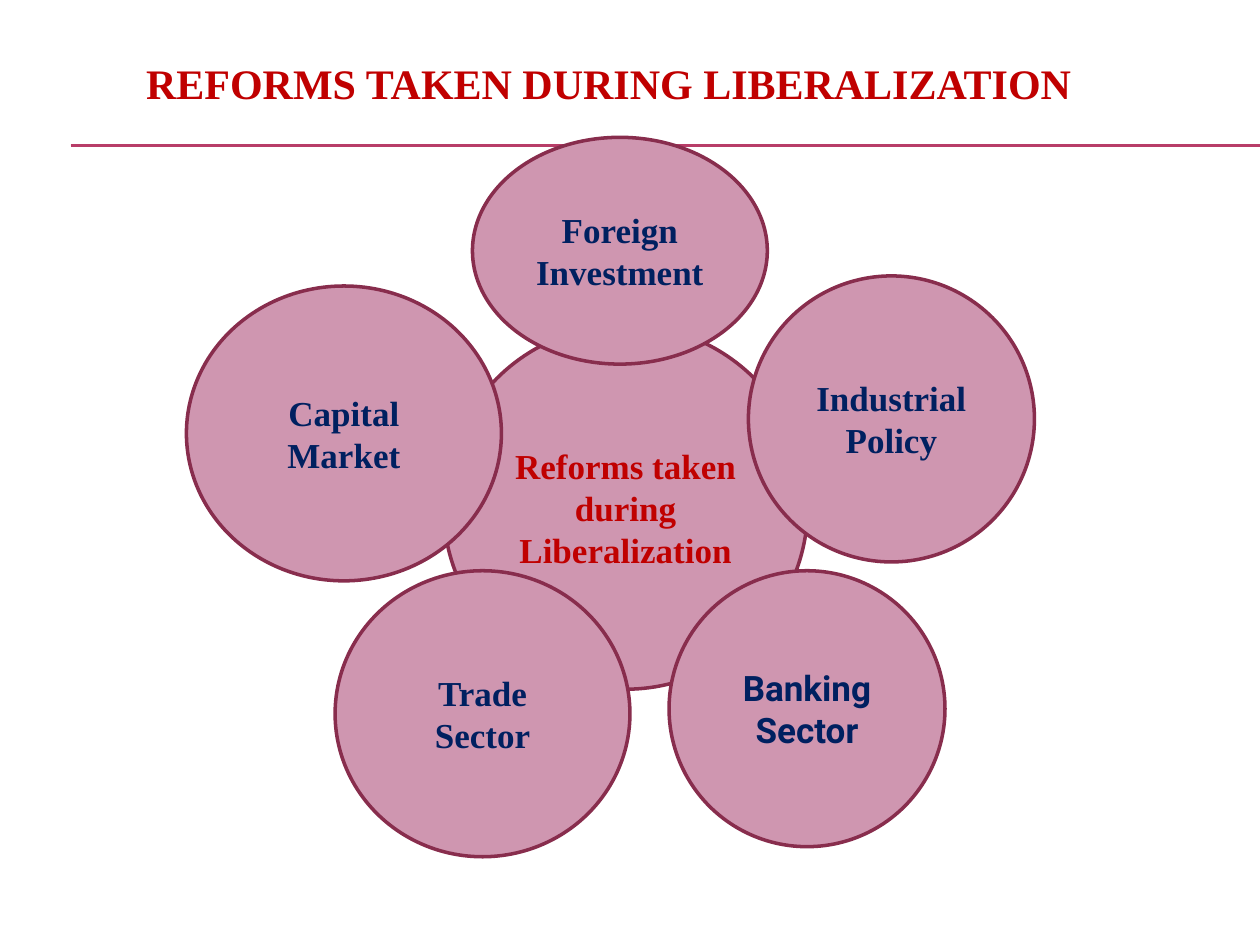
from lxml import etree
from pptx import Presentation
from pptx.dml.color import RGBColor
from pptx.enum.shapes import MSO_CONNECTOR, MSO_SHAPE
from pptx.enum.text import MSO_ANCHOR, PP_ALIGN
from pptx.oxml.ns import qn
from pptx.util import Inches, Pt

STRAIGHT, OVAL = MSO_CONNECTOR.STRAIGHT, MSO_SHAPE.OVAL
MIDDLE = MSO_ANCHOR.MIDDLE
LEFT, CENTER = PP_ALIGN.LEFT, PP_ALIGN.CENTER

RED = RGBColor(0xC0, 0x00, 0x00)
NAVY = RGBColor(0x00, 0x20, 0x60)
ROSE = RGBColor(0xCF, 0x96, 0xB0)
PLUM = RGBColor(0x88, 0x2D, 0x4D)
RULE_PINK = RGBColor(0xB8, 0x3D, 0x68)
SERIF, SANS = "Times New Roman", "Roboto"


def style_text(frame, size, face, color, alignment):
    frame.word_wrap = True
    frame.vertical_anchor = MIDDLE
    for paragraph in frame.paragraphs:
        paragraph.alignment = alignment
        font = paragraph.font
        font.size, font.name, font.bold = Pt(size), face, True
        font.color.rgb = color


prs = Presentation()
prs.slide_width, prs.slide_height = Inches(10), Inches(7.5)
slide = prs.slides.add_slide(prs.slide_layouts[5])

heading = slide.shapes.title
heading.left, heading.top = Inches(0.31), Inches(0.23)
heading.width, heading.height = Inches(9.5), Inches(0.86)
heading.text_frame.text = "REFORMS TAKEN DURING LIBERALIZATION"
heading.text_frame.margin_left = Inches(0.85)
style_text(heading.text_frame, 24, SERIF, RED, LEFT)

# Double rule under the heading
for y in (1.15, 1.16):
    rule = slide.shapes.add_connector(
        STRAIGHT, Inches(0.56), Inches(y), prs.slide_width, Inches(y))
    rule.line.color.rgb = RULE_PINK
    rule.line.width = Pt(0.75)
    etree.SubElement(rule._element.spPr, qn("a:effectLst"))

# Hub first, then the reforms that overlap it: left, top, width, height
circles = [
    ("Reforms taken during Liberalization", 3.52, 2.58, 2.89, 2.89, SERIF, RED),
    ("Foreign\nInvestment", 3.75, 1.09, 2.34, 1.8, SERIF, NAVY),
    ("Industrial\nPolicy", 5.94, 2.19, 2.27, 2.27, SERIF, NAVY),
    ("Trade\nSector", 2.66, 4.53, 2.34, 2.27, SERIF, NAVY),
    ("Capital\nMarket", 1.48, 2.27, 2.5, 2.34, SERIF, NAVY),
    ("Banking Sector", 5.31, 4.53, 2.19, 2.19, SANS, NAVY),
]
for reform, left, top, width, height, face, color in circles:
    circle = slide.shapes.add_shape(
        OVAL, Inches(left), Inches(top), Inches(width), Inches(height))
    circle.shadow.inherit = False
    circle.fill.solid()
    circle.fill.fore_color.rgb = ROSE
    circle.line.color.rgb = PLUM
    circle.line.width = Pt(2)
    circle.text_frame.text = reform
    style_text(circle.text_frame, 20, face, color, CENTER)

prs.save("out.pptx")
